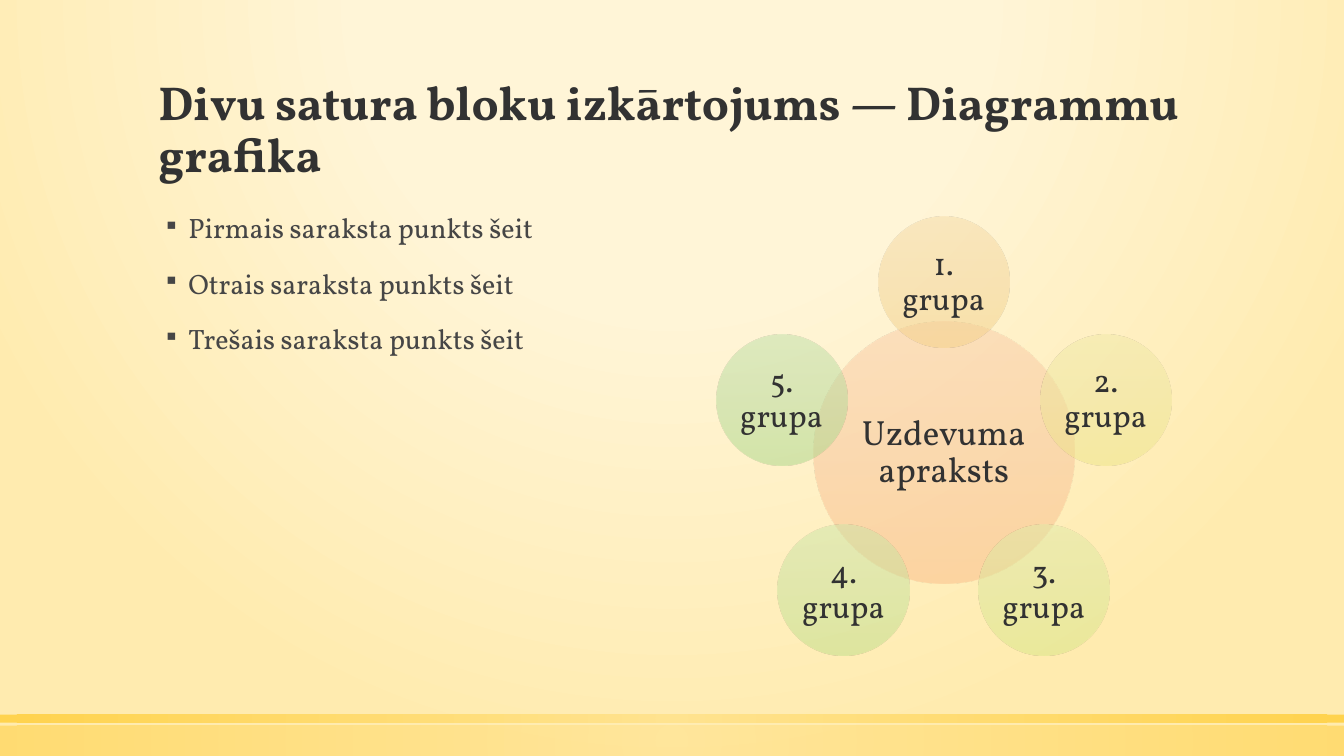
import math

import lxml.etree
import pptx
import pptx.dml.color
import pptx.enum.shapes
import pptx.enum.text
import pptx.oxml.ns
import pptx.util

Inches = pptx.util.Inches
Pt = pptx.util.Pt
qn = pptx.oxml.ns.qn
ANCHOR = pptx.enum.text.MSO_ANCHOR
ALIGN = pptx.enum.text.PP_ALIGN
SHAPE = pptx.enum.shapes.MSO_SHAPE


def color(value):
    return pptx.dml.color.RGBColor.from_string(value)


def add_xml(parent, tag, **attributes):
    return lxml.etree.SubElement(parent, qn(tag), attributes)


class SlideBuilder:
    """Holds the style and the current slide, and adds each kind of element."""

    font = "Vollkorn"
    dark = "323232"
    gray = "464646"

    def __init__(self, presentation):
        self.slide = presentation.slides.add_slide(presentation.slide_layouts[5])

    def gradient(self, fill, element, stops, focus=None):
        fill.gradient()
        gradient = element.find(".//" + qn("a:gradFill"))
        for child in list(gradient):
            gradient.remove(child)
        stop_list = add_xml(gradient, "a:gsLst")
        for position, value, opacity in stops:
            stop = add_xml(stop_list, "a:gs", pos=str(position * 1000))
            rgb = add_xml(stop, "a:srgbClr", val=value)
            if opacity < 100:
                add_xml(rgb, "a:alpha", val=str(opacity * 1000))
        if focus:
            route = add_xml(gradient, "a:path", path="circle")
            sides = {side: str(share * 1000) for side, share in zip("ltrb", focus)}
            add_xml(route, "a:fillToRect", **sides)
        else:
            add_xml(gradient, "a:lin", ang="5400000", scaled="0")

    def background(self, stops, focus):
        self.gradient(self.slide.background.fill, self.slide.element, stops, focus)

    def text(self, paragraph, text, size, value, bold=False):
        paragraph.line_spacing = 0.9
        run = paragraph.add_run()
        run.text = text
        run.font.name = self.font
        run.font.size = Pt(size)
        run.font.bold = bold
        run.font.color.rgb = color(value)

    def title(self, text, left, top, width, height):
        title = self.slide.shapes.title
        title.left, title.top = Inches(left), Inches(top)
        title.width, title.height = Inches(width), Inches(height)
        frame = title.text_frame
        frame.auto_size = pptx.enum.text.MSO_AUTO_SIZE.NONE
        frame.vertical_anchor = ANCHOR.BOTTOM
        frame.paragraphs[0].alignment = ALIGN.LEFT
        self.text(frame.paragraphs[0], text, 34, self.dark, bold=True)

    def bullets(self, items, left, top, width, height):
        box = self.slide.shapes.add_textbox(
            Inches(left), Inches(top), Inches(width), Inches(height))
        frame = box.text_frame
        frame.word_wrap = True
        for index, item in enumerate(items):
            paragraph = frame.add_paragraph() if index else frame.paragraphs[0]
            paragraph.space_before = Pt(18)
            self.text(paragraph, item, 20, self.gray)
            properties = paragraph._p.get_or_add_pPr()
            properties.set("marL", str(Inches(0.3)))
            properties.set("indent", str(Inches(-0.25)))
            add_xml(properties, "a:buSzPct", val="80000")
            add_xml(properties, "a:buChar", char="▪")

    def shape(self, kind, left, top, width, height, stops, focus=None):
        shape = self.slide.shapes.add_shape(
            kind, Inches(left), Inches(top), Inches(width), Inches(height))
        shape.shadow.inherit = False
        shape.line.fill.background()
        self.gradient(shape.fill, shape._element, stops, focus)
        return shape

    def bar(self, top, height, opacity):
        stops = [(0, "FFE186", opacity), (100, "FFCD36", opacity)]
        self.shape(SHAPE.RECTANGLE, 0, top, 13.33, height, stops, (50, 50, 50, 50))

    def circle(self, text, center_x, center_y, diameter, size, colors):
        stops = [(position, value, 50) for position, value in zip((0, 50, 100), colors)]
        shape = self.shape(SHAPE.OVAL, center_x - diameter / 2, center_y - diameter / 2,
                           diameter, diameter, stops)
        frame = shape.text_frame
        frame.word_wrap = True
        frame.vertical_anchor = ANCHOR.MIDDLE
        frame.margin_left = frame.margin_right = Inches(0.03)
        frame.margin_top = frame.margin_bottom = Inches(0.03)
        frame.paragraphs[0].alignment = ALIGN.CENTER
        self.text(frame.paragraphs[0], text, size, self.dark)


def main():
    presentation = pptx.Presentation()
    presentation.slide_width = Inches(13.33)
    presentation.slide_height = Inches(7.5)
    builder = SlideBuilder(presentation)

    builder.background([(0, "FFF5D7", 59), (40, "FFF5D7", 66), (100, "FFEBAF", 100)],
                       (50, -80, 50, 180))
    builder.bar(7.2, 0.3, 50)
    builder.bar(7.09, 0.08, 80)
    builder.title("Divu satura bloku izkārtojums — Diagrammu grafika", 1.47, 0.51, 10.4, 1.35)
    builder.bullets(["Pirmais saraksta punkts šeit",
                     "Otrais saraksta punkts šeit",
                     "Trešais saraksta punkts šeit"], 1.47, 2.08, 5, 4.51)

    center_x, center_y, orbit = 9.36, 4.49, 1.69
    builder.circle("Uzdevuma apraksts", center_x, center_y, 2.59, 25,
                   ("FACDA9", "F8C39A", "FBBB87"))
    group_colors = [
        ("F6DBA8", "F3D49A", "F5D187"),
        ("F1EAA8", "EDE59A", "EEE587"),
        ("E0EBA8", "DAE79A", "D8E787"),
        ("CDE6A8", "C5E19A", "BEE088"),
        ("BFE0A9", "B4DA9B", "A9D889"),
    ]
    for index, colors in enumerate(group_colors):
        angle = math.tau * index / len(group_colors)
        builder.circle(f"{index + 1}. grupa", center_x + orbit * math.sin(angle),
                       center_y - orbit * math.cos(angle), 1.3, 23, colors)

    presentation.save("out.pptx")


if __name__ == "__main__":
    main()
